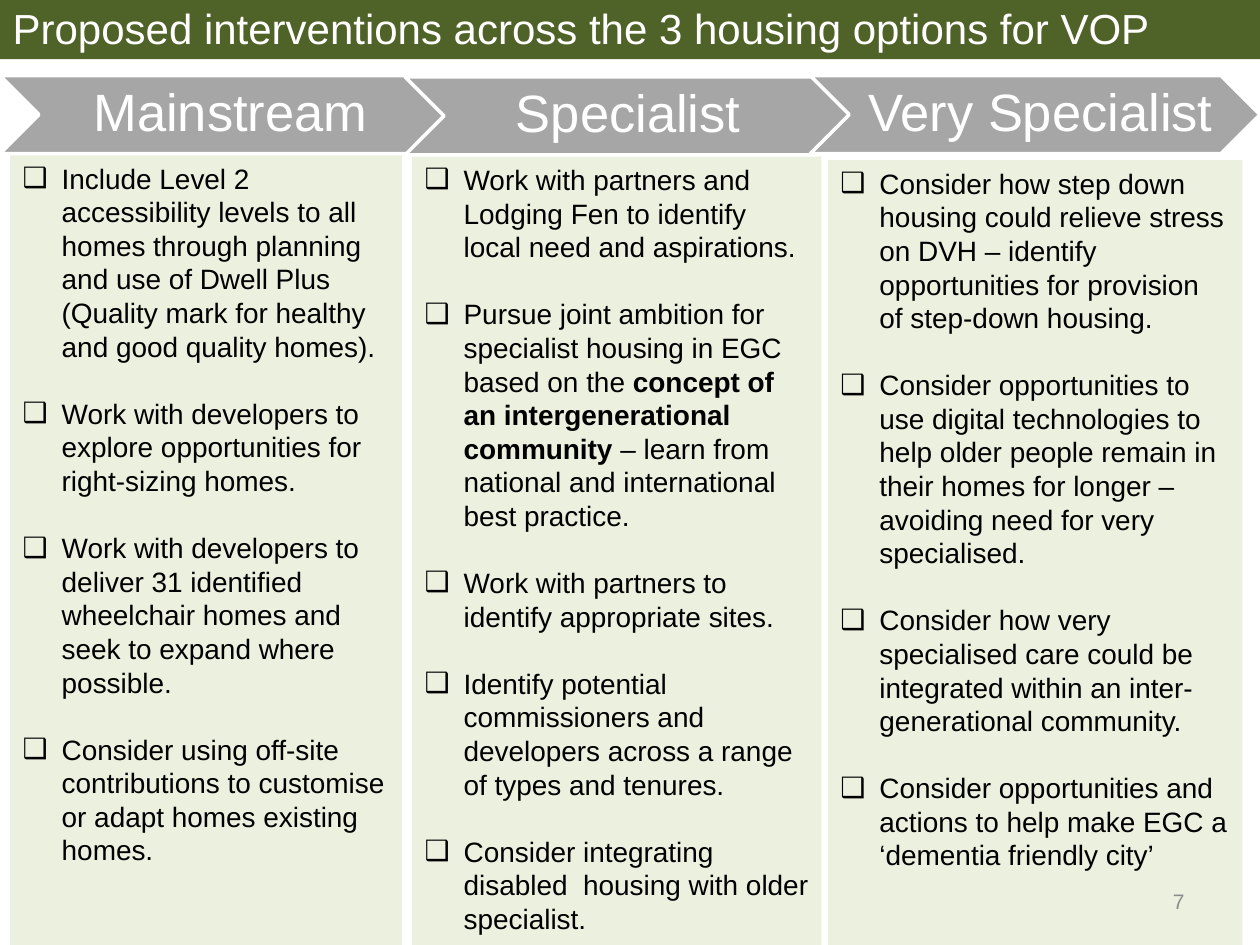
from lxml import etree
from pptx import Presentation
from pptx.dml.color import RGBColor
from pptx.enum.shapes import MSO_SHAPE
from pptx.enum.text import MSO_ANCHOR, MSO_AUTO_SIZE, PP_ALIGN
from pptx.oxml.ns import qn
from pptx.util import Inches, Pt

COLORS = {
    "banner": "4F6228",
    "chevron": "A6A6A6",
    "panel": "EBF1DE",
    "white": "FFFFFF",
    "text": "000000",
    "number": "8C8C8C",
}

OPTIONS = [
    ("Mainstream", 0.60, 1, (0.08, 1.23, 3.11), [
        "Include Level 2 accessibility levels to all homes through planning and use of "
        "Dwell Plus (Quality mark for healthy and good quality homes).",
        "Work with developers to explore opportunities for right-sizing homes.",
        "Work with developers to deliver 31 identified wheelchair homes and seek to "
        "expand where possible.",
        "Consider using off-site contributions to customise or adapt homes existing homes.",
    ]),
    ("Specialist ", 0.61, 2, (3.27, 1.24, 3.25), [
        "Work with partners and Lodging Fen to identify local need and aspirations.",
        "Pursue joint ambition for specialist housing in EGC based on the "
        "*concept of an intergenerational community *"
        "– learn from national and international best practice.",
        "Work with partners to identify appropriate sites.",
        "Identify potential commissioners and developers across a range of types and tenures.",
        "Consider integrating disabled  housing with older specialist.",
    ]),
    ("Very Specialist", 0.60, 4, (6.57, 1.27, 3.29), [
        "Consider how step down housing could relieve stress on DVH – identify "
        "opportunities for provision of step-down housing.",
        "Consider opportunities to use digital technologies to help older people remain "
        "in their homes for longer – avoiding need for very specialised.",
        "Consider how very specialised care could be integrated within an "
        "inter-generational community.",
        "Consider opportunities and actions to help make EGC a ‘dementia friendly city’",
    ]),
]


def place(shape, left, top, width, height, fill):
    shape.left, shape.top = Inches(left), Inches(top)
    shape.width, shape.height = Inches(width), Inches(height)
    shape.fill.solid()
    shape.fill.fore_color.rgb = RGBColor.from_string(COLORS[fill])
    shape.text_frame.word_wrap = True
    shape.text_frame.auto_size = MSO_AUTO_SIZE.NONE


def style(paragraph, size, color, align):
    paragraph.alignment = align
    paragraph.font.name = "Arial"
    paragraph.font.size = Pt(size)
    paragraph.font.bold = False
    paragraph.font.color.rgb = RGBColor.from_string(COLORS[color])


prs = Presentation()
prs.slide_width, prs.slide_height = Inches(10), Inches(7.5)
slide = prs.slides.add_slide(prs.slide_layouts.get_by_name("Comparison"))
bodies = {holder.placeholder_format.idx: holder for holder in slide.placeholders}

banner = slide.shapes.title
place(banner, 0, -0.03, 10, 0.5, "banner")
banner.text_frame.vertical_anchor = MSO_ANCHOR.MIDDLE
banner.text_frame.text = "Proposed interventions across the 3 housing options for VOP"
style(banner.text_frame.paragraphs[0], 24, "white", PP_ALIGN.LEFT)

for column, (heading, heading_top, body_idx, panel_box, actions) in enumerate(OPTIONS):
    chevron = slide.shapes.add_shape(MSO_SHAPE.CHEVRON, 0, 0, 0, 0)
    place(chevron, column * 3.215, heading_top, 3.57, 0.62, "chevron")
    chevron.shadow.inherit = False
    chevron.line.color.rgb = RGBColor.from_string(COLORS["white"])
    chevron.line.width = Pt(2)
    label = chevron.text_frame
    label.vertical_anchor = MSO_ANCHOR.MIDDLE
    label.margin_left = Inches(0.13)
    label.margin_top = label.margin_right = label.margin_bottom = Inches(0.04)
    label.text = heading
    label.paragraphs[0].line_spacing = 0.9
    style(label.paragraphs[0], 30, "white", PP_ALIGN.CENTER)

    panel = bodies[body_idx]
    place(panel, *panel_box, 6.29, "panel")
    panel.text_frame.vertical_anchor = MSO_ANCHOR.TOP
    for row, action in enumerate(actions):
        item = panel.text_frame.paragraphs[0] if row == 0 else panel.text_frame.add_paragraph()
        properties = item._p.get_or_add_pPr()
        properties.set("marL", str(Inches(0.31)))
        properties.set("indent", str(-Inches(0.31)))
        etree.SubElement(properties, qn("a:buFont")).set("typeface", "Arial")
        etree.SubElement(properties, qn("a:buChar")).set("char", "❑")
        item.space_before = Pt(19.2 if row else 0)
        style(item, 16, "text", PP_ALIGN.LEFT)
        for part, words in enumerate(action.split("*")):
            run = item.add_run()
            run.text = words
            if part % 2:
                run.font.bold = True

spare_body = bodies[3]._element
spare_body.getparent().remove(spare_body)

page_number = slide.shapes.add_textbox(Inches(7.17), Inches(6.95), Inches(2.33), Inches(0.4))
page_number.text_frame.word_wrap = True
page_number.text_frame.vertical_anchor = MSO_ANCHOR.MIDDLE
page_number.text_frame.text = "7"
style(page_number.text_frame.paragraphs[0], 12, "number", PP_ALIGN.RIGHT)

prs.save("out.pptx")
